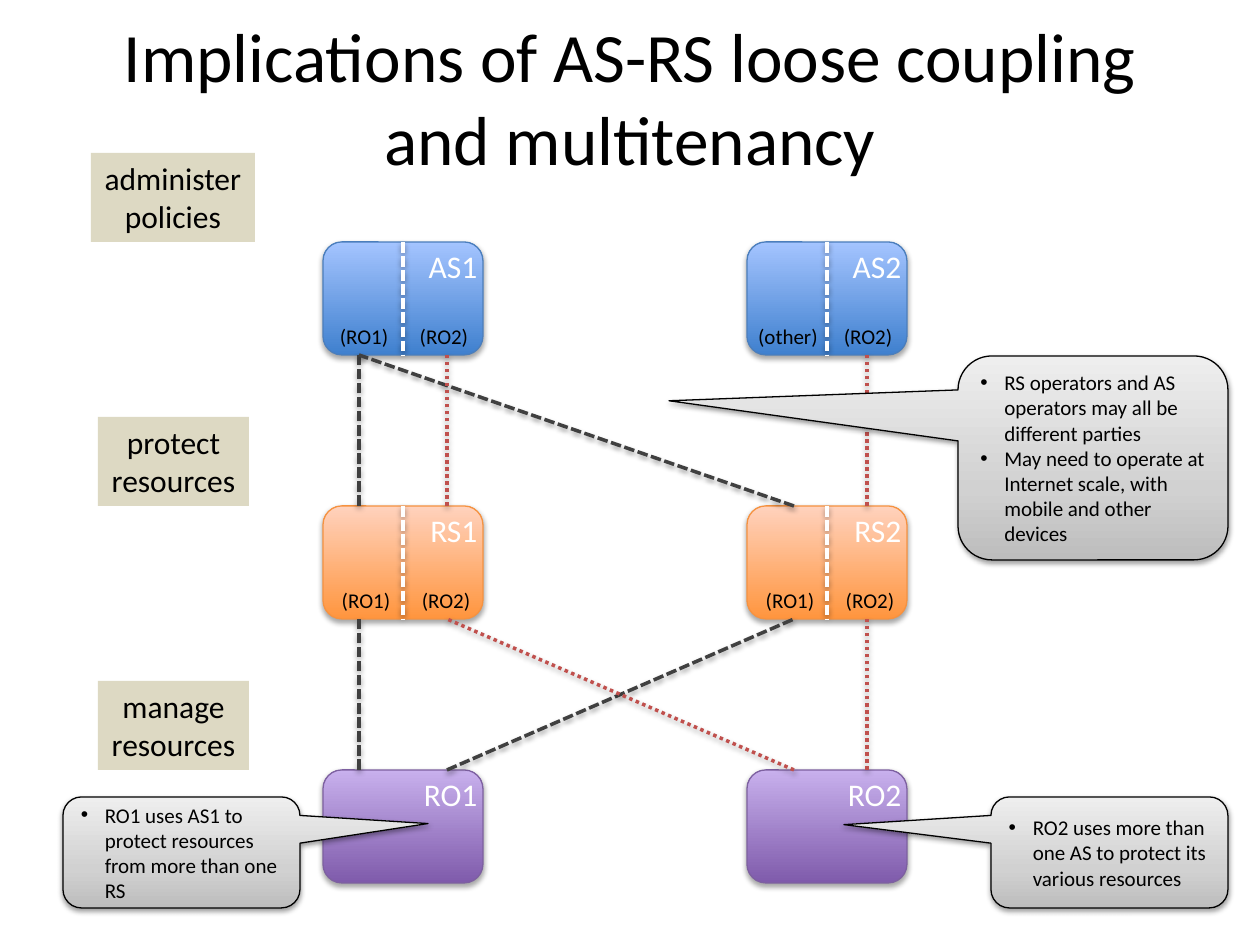
"""Build a slide on the loose coupling of authorization and resource servers."""
import dataclasses
import lxml.etree
import pptx
import pptx.dml.color
import pptx.enum.dml
import pptx.enum.shapes
import pptx.enum.text
import pptx.oxml.ns
import pptx.util

PX = 7257
qn = pptx.oxml.ns.qn
Kind = pptx.enum.shapes.MSO_SHAPE
Align = pptx.enum.text.PP_ALIGN
Anchor = pptx.enum.text.MSO_ANCHOR
Dash = pptx.enum.dml.MSO_LINE


@dataclasses.dataclass(frozen=True)
class Theme:
    font: str = "Calibri"
    black: str = "000000"
    white: str = "FFFFFF"
    tag: str = "DDD9C3"
    ro1_link: str = "404040"
    ro2_link: str = "C0504D"
    blue: tuple = ("4B7EBC", ((0, "3F80CE"), (100, "A4C4FF")))
    orange: tuple = ("F69240", ((0, "FF953E"), (100, "FFD2BD")))
    purple: tuple = ("7D60A0", ((0, "7F5BAB"), (100, "C8B0ED")))
    grey: tuple = ("000000", ((0, "BDBDBD"), (35, "D1D1D1"), (100, "EEEEEE")))
    title_size: float = 39.6
    label_size: float = 18
    note_size: float = 12


theme = Theme()


def write(shape, *lines, size, color=theme.black, align=Align.CENTER,
          anchor=Anchor.TOP, wrap=True, inset=None, bullet=False):
    frame = shape.text_frame
    frame.word_wrap = wrap
    frame.vertical_anchor = anchor
    if inset is not None:
        frame.margin_left = frame.margin_right = inset * PX
        frame.margin_top = frame.margin_bottom = inset * PX
    for index, line in enumerate(lines):
        paragraph = frame.add_paragraph() if index else frame.paragraphs[0]
        paragraph.text = line
        paragraph.alignment = align
        for run in paragraph.runs:
            run.font.name = theme.font
            run.font.size = pptx.util.Pt(size)
            run.font.color.rgb = pptx.dml.color.RGBColor.from_string(color)
        if bullet:
            properties = paragraph._p.get_or_add_pPr()
            properties.set("marL", str(24 * PX))
            properties.set("indent", str(-24 * PX))
            lxml.etree.SubElement(properties, qn("a:buFont"), typeface="Arial")
            lxml.etree.SubElement(properties, qn("a:buChar"), char="•")


def decorate(shape, outline, width=0.75, dash=None, stops=(), distance=1.6, opacity=38):
    if stops:
        shape.fill.gradient()
        shape.fill.gradient_angle = 90
        ramp = shape._element.spPr.find(".//" + qn("a:gsLst"))
        ramp.clear()
        for position, color in stops:
            stop = lxml.etree.SubElement(ramp, qn("a:gs"), pos=str(position * 1000))
            lxml.etree.SubElement(stop, qn("a:srgbClr"), val=color)
    shape.line.color.rgb = pptx.dml.color.RGBColor.from_string(outline)
    shape.line.width = pptx.util.Pt(width)
    if dash:
        shape.line.dash_style = dash
    effects = lxml.etree.SubElement(shape._element.spPr, qn("a:effectLst"))
    shadow = lxml.etree.SubElement(
        effects, qn("a:outerShdw"), blurRad=str(pptx.util.Pt(3.1)),
        dist=str(pptx.util.Pt(distance)), dir="5400000", rotWithShape="0")
    tint = lxml.etree.SubElement(shadow, qn("a:srgbClr"), val=theme.black)
    lxml.etree.SubElement(tint, qn("a:alpha"), val=str(opacity * 1000))


deck = pptx.Presentation()
deck.slide_width, deck.slide_height = 1260 * PX, 945 * PX
slide = deck.slides.add_slide(deck.slide_layouts[6])
shapes = slide.shapes
straight = pptx.enum.shapes.MSO_CONNECTOR.STRAIGHT

title = shapes.add_textbox(63 * PX, 38 * PX, 1134 * PX, 116 * PX)
write(title, "Implications of AS-RS loose coupling\vand multitenancy",
      size=theme.title_size, anchor=Anchor.MIDDLE)

card_lefts = (323, 747)
card_width, card_height = 160, 113
row_tops = [242 + 264 * row for row in range(3)]

for top, width, words in zip(row_tops, (164, 151, 151), (
        ("administer", "policies"), ("protect", "resources"), ("manage", "resources"))):
    tag = shapes.add_shape(Kind.RECTANGLE, (173 - width // 2) * PX, (top - 89) * PX,
                           width * PX, 89 * PX)
    tag.shadow.inherit = False
    tag.fill.solid()
    tag.fill.fore_color.rgb = pptx.dml.color.RGBColor.from_string(theme.tag)
    tag.line.fill.background()
    write(tag, *words, size=theme.label_size, wrap=False)

for top, party, (outline, stops) in zip(
        row_tops, ("AS", "RS", "RO"), (theme.blue, theme.orange, theme.purple)):
    for number, left in enumerate(card_lefts, 1):
        card = shapes.add_shape(Kind.ROUNDED_RECTANGLE, left * PX, top * PX,
                                card_width * PX, card_height * PX)
        decorate(card, outline, stops=stops, distance=1.8, opacity=35)
        write(card, f"{party}{number}", size=theme.label_size, color=theme.white,
              align=Align.RIGHT, inset=0)
        if party != "RO":
            middle = left + card_width // 2
            divider = shapes.add_connector(straight, middle * PX, top * PX,
                                           middle * PX, (top + card_height) * PX)
            decorate(divider, theme.white, width=2, dash=Dash.SQUARE_DOT)

links = (
    (theme.ro1_link, Dash.SQUARE_DOT,
     ((2, 359, 359), (1, 359, 359), (2, 447, 794), (1, 794, 359))),
    (theme.ro2_link, Dash.ROUND_DOT,
     ((2, 794, 447), (2, 867, 867), (1, 447, 447), (1, 867, 867))),
)
for color, dash, routes in links:
    for row, lower_x, upper_x in routes:
        link = shapes.add_connector(straight, lower_x * PX, row_tops[row] * PX, upper_x * PX,
                                    (row_tops[row - 1] + card_height) * PX)
        decorate(link, color, width=2, dash=dash)

tenants = (
    (row_tops[0], 41, (("(RO1)", "(RO2)"), ("(other)", "(RO2)"))),
    (row_tops[1], 43, (("(RO1)", "(RO2)"), ("(RO1)", "(RO2)"))),
)
for top, center, pairs in tenants:
    for left, pair in zip(card_lefts, pairs):
        for half, name in enumerate(pair):
            width = 44 + 6 * len(name)
            tenant = shapes.add_textbox((left + center + 80 * half - width // 2) * PX,
                                        (top + 75) * PX, width * PX, 38 * PX)
            write(tenant, name, size=theme.note_size, wrap=False)

callouts = (
    (63, 797, 237, 111, (1.04, -0.26),
     ("RO1 uses AS1 to protect resources from more than one RS",)),
    (991, 797, 237, 111, (-1.12, -0.25),
     ("RO2 uses more than one AS to protect its various resources",)),
    (958, 356, 270, 204, (-1.57, -0.28),
     ("RS operators and AS operators may all be different parties",
      "May need to operate at Internet scale, with mobile and other devices")),
)
for left, top, width, height, pointer, remarks in callouts:
    callout = shapes.add_shape(Kind.ROUNDED_RECTANGULAR_CALLOUT, left * PX, top * PX,
                               width * PX, height * PX)
    callout.adjustments[0], callout.adjustments[1] = pointer
    outline, stops = theme.grey
    decorate(callout, outline, stops=stops)
    write(callout, *remarks, size=theme.note_size, align=Align.LEFT,
          anchor=Anchor.MIDDLE, bullet=True)

deck.save("out.pptx")
